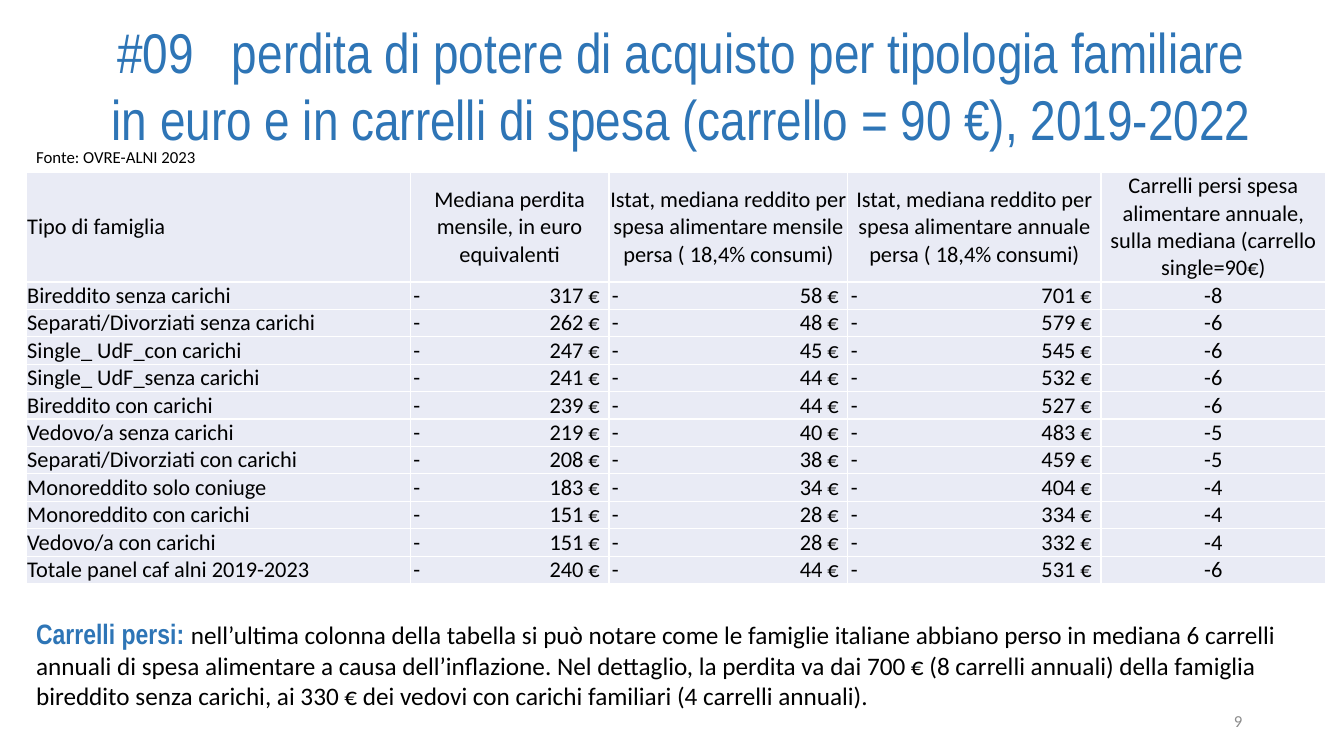
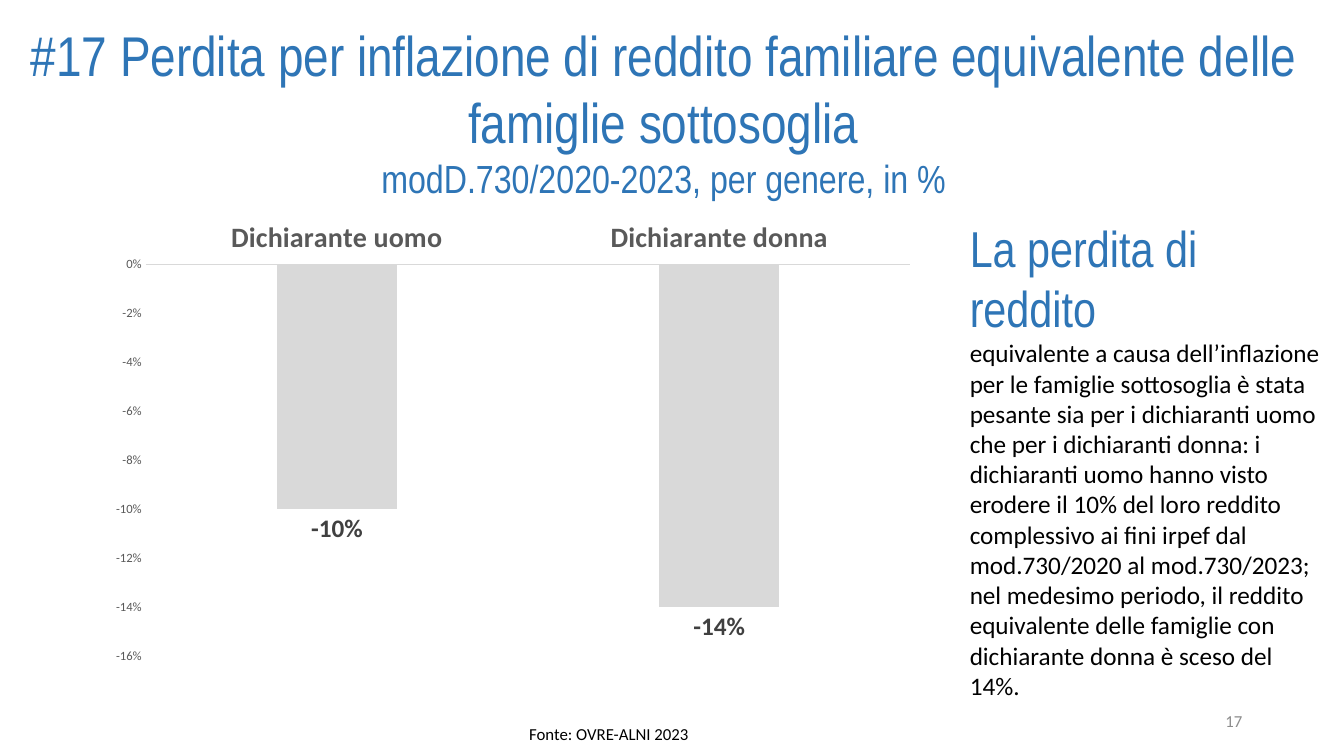
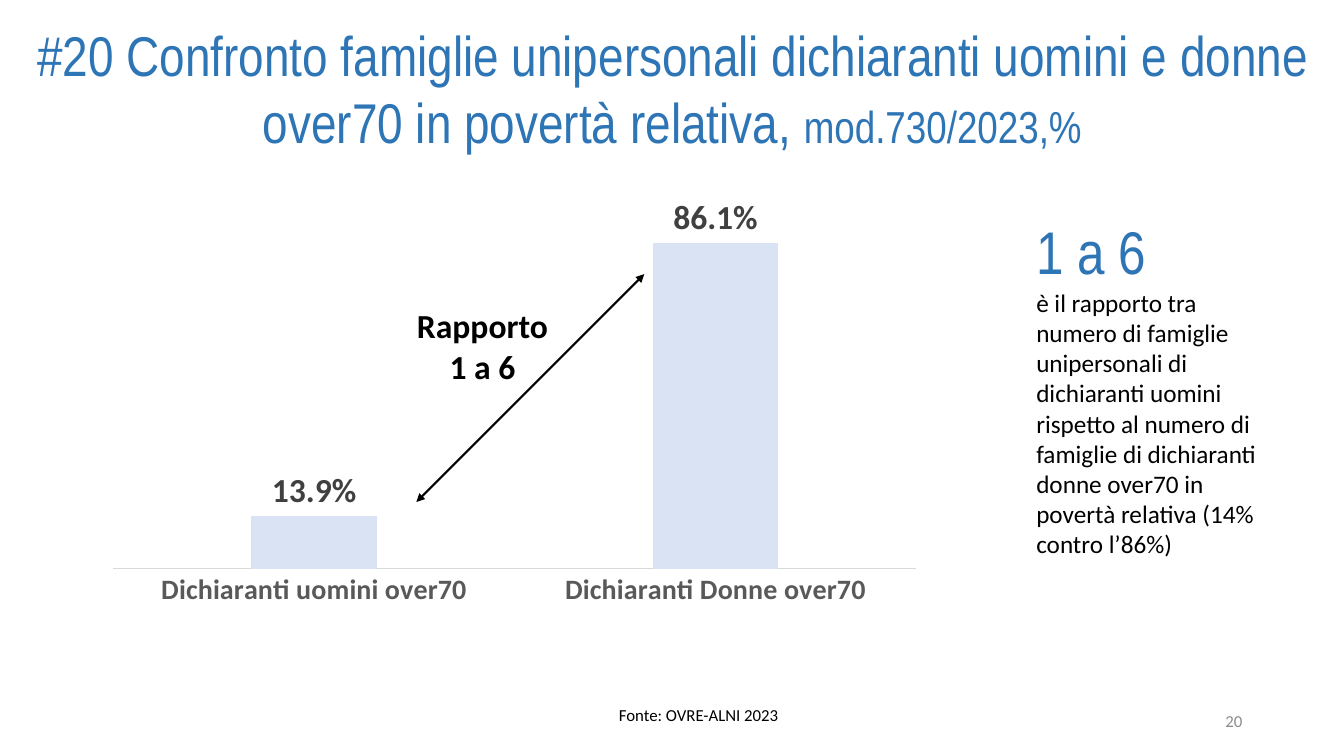
"""Build three slides on purchasing power and family income in Italy."""
from lxml import etree
from pptx import Presentation
from pptx.chart.data import CategoryChartData
from pptx.dml.color import RGBColor
from pptx.enum.chart import XL_CHART_TYPE as CT, XL_LABEL_POSITION as LP
from pptx.enum.chart import XL_TICK_LABEL_POSITION as TLP, XL_TICK_MARK as TM
from pptx.enum.shapes import MSO_CONNECTOR as CONN
from pptx.enum.text import MSO_ANCHOR as ANCHOR, MSO_AUTO_SIZE as FIT, PP_ALIGN as ALIGN
from pptx.oxml.ns import qn
from pptx.util import Inches, Pt

COLORS = {
    "accent": "2E75B6", "text": "000000", "page": "8C8C8C", "cell": "E9EBF5",
    "white": "FFFFFF", "axis": "D9D9D9", "axis_text": "595959",
    "label": "404040", "grey_bar": "D9D9D9", "blue_bar": "DAE3F3",
}
HEAD, BODY = "Arial Narrow", "Calibri"


def rgb(name):
    return RGBColor.from_string(COLORS[name])


def style(font, size, color="text", bold=False, name=BODY):
    font.size, font.bold, font.name = Pt(size), bold, name
    font.color.rgb = rgb(color)


def head(text, size, bold=False, spacing=0):
    return text, dict(size=size, color="accent", bold=bold, name=HEAD), spacing


def body(text, size=18, color="text", bold=False):
    return text, dict(size=size, color=color, bold=bold), 0


class Deck:
    def __init__(self):
        self.prs = Presentation()
        self.prs.slide_width, self.prs.slide_height = Inches(13.33), Inches(7.5)
        self.s = None

    def slide(self, number):
        self.s = self.prs.slides.add_slide(self.prs.slide_layouts[6])
        self.text((9.42, 6.95, 3, 0.4), [[body(number, 12, "page")]],
                  ALIGN.RIGHT, ANCHOR.MIDDLE)

    def fill(self, tf, paragraphs, align):
        for i, runs in enumerate(paragraphs):
            p = tf.paragraphs[0] if i == 0 else tf.add_paragraph()
            p.alignment = align
            for text, look, spacing in runs:
                r = p.add_run()
                r.text = text
                style(r.font, **look)
                if spacing:
                    r._r.get_or_add_rPr().set("spc", str(spacing * 100))

    def text(self, box, paragraphs, align=ALIGN.LEFT, anchor=ANCHOR.TOP, wrap=True):
        tf = self.s.shapes.add_textbox(*map(Inches, box)).text_frame
        tf.word_wrap, tf.auto_size, tf.vertical_anchor = wrap, FIT.NONE, anchor
        self.fill(tf, paragraphs, align)

    def title(self, box, paragraphs):
        self.text(box, paragraphs, ALIGN.CENTER)

    def source(self, left, top):
        self.text((left, top, 1.78, 0.3), [[body("Fonte: OVRE-ALNI 2023", 12)]], wrap=False)

    def cell(self, cell, text, align, anchor, tab=None):
        cell.fill.solid()
        cell.fill.fore_color.rgb = rgb("cell")
        cell.margin_left = cell.margin_right = Inches(0.01)
        cell.margin_top = cell.margin_bottom = 0
        cell.vertical_anchor = anchor
        self.fill(cell.text_frame, [[body(text, 16)]], align)
        if tab:
            pPr = cell.text_frame.paragraphs[0]._p.get_or_add_pPr()
            tabs = etree.SubElement(pPr, qn("a:tabLst"))
            etree.SubElement(tabs, qn("a:tab"), pos=str(tab), algn="r")
        tcPr = cell._tc.get_or_add_tcPr()
        for i, side in enumerate(("lnL", "lnR", "lnT", "lnB")):
            ln = etree.Element(qn(f"a:{side}"), w=str(Pt(1)))
            solid = etree.SubElement(ln, qn("a:solidFill"))
            etree.SubElement(solid, qn("a:srgbClr"), val=COLORS["white"])
            tcPr.insert(i, ln)

    def table(self, left, top, widths, heights, header, rows):
        tb = self.s.shapes.add_table(len(heights), len(widths), Inches(left), Inches(top),
                                     Inches(sum(widths)), Inches(sum(heights))).table
        tb.first_row = tb.horz_banding = False
        for col, width in zip(tb.columns, widths):
            col.width = Inches(width)
        for row, height in zip(tb.rows, heights):
            row.height = Inches(height)
        for c, text in enumerate(header):
            self.cell(tb.cell(0, c), text, ALIGN.CENTER if c else ALIGN.LEFT, ANCHOR.MIDDLE)
        for r, (family, *losses, carts) in enumerate(rows, 1):
            self.cell(tb.cell(r, 0), family, ALIGN.LEFT, ANCHOR.BOTTOM)
            for c, loss in enumerate(losses, 1):
                self.cell(tb.cell(r, c), f"-\t{loss} €", ALIGN.LEFT, ANCHOR.BOTTOM,
                          Inches(widths[c] - 0.12))
                tb.cell(r, c).margin_left = Inches(0.03)
            self.cell(tb.cell(r, len(widths) - 1), str(carts), ALIGN.CENTER, ANCHOR.BOTTOM)

    def column_chart(self, box, plot_box, data, color, fmt, label_size, scale):
        cd = CategoryChartData(number_format=fmt)
        cd.categories = list(data)
        cd.add_series("Series 1", list(data.values()))
        ch = self.s.shapes.add_chart(CT.COLUMN_CLUSTERED, *map(Inches, box), cd).chart
        ch.has_legend = ch.has_title = False
        style(ch.font, 10)
        plot = ch.plots[0]
        plot.gap_width, plot.overlap, plot.vary_by_categories = 219, -27, False
        bar = plot.series[0]
        bar.invert_if_negative = False
        bar.format.fill.solid()
        bar.format.fill.fore_color.rgb = rgb(color)
        labels = bar.data_labels
        labels.show_value, labels.position = True, LP.OUTSIDE_END
        labels.number_format, labels.number_format_is_linked = fmt, False
        style(labels.font, label_size, "label", True)
        cat, val = ch.category_axis, ch.value_axis
        cat.major_tick_mark = val.major_tick_mark = TM.NONE
        cat.format.line.color.rgb = rgb("axis")
        cat.format.line.width = Pt(0.75)
        style(cat.tick_labels.font, 20, "axis_text", True)
        val.minimum_scale, val.maximum_scale, val.major_unit = scale
        val.has_major_gridlines = False
        val.format.line.fill.background()
        style(val.tick_labels.font, 9, "axis_text")
        val.tick_labels.number_format = fmt
        val.tick_labels.number_format_is_linked = False
        area = ch._chartSpace.chart.plotArea
        for old in area.findall(qn("c:layout")):
            area.remove(old)
        layout = etree.Element(qn("c:layout"))
        manual = etree.SubElement(layout, qn("c:manualLayout"))
        parts = [("layoutTarget", "inner"), ("xMode", "edge"), ("yMode", "edge")]
        for tag, value in parts + list(zip("xywh", plot_box)):
            etree.SubElement(manual, qn(f"c:{tag}"), val=str(value))
        area.insert(0, layout)
        return ch

    def double_arrow(self, start, end):
        cx = self.s.shapes.add_connector(CONN.STRAIGHT, *map(Inches, start + end))
        cx.line.color.rgb, cx.line.width = rgb("text"), Pt(1.5)
        ln = cx.line._get_or_add_ln()
        for tag in ("a:headEnd", "a:tailEnd"):
            etree.SubElement(ln, qn(tag), type="triangle")
        etree.SubElement(cx._element.spPr, qn("a:effectLst"))


def main():
    deck = Deck()

    deck.slide("9")
    deck.title((0.55, 0.12, 12.41, 1.45), [
        [head("#09", 40), head(" ", 40, spacing=18),
         head("perdita di potere di acquisto per tipologia familiare", 40)],
        [head("in euro e in carrelli di spesa (carrello = 90 €), 2019-2022", 40)]])
    deck.text((0.26, 6.07, 12.7, 1.19), [[
        head("Carrelli persi: ", 20, True),
        body("nell’ultima colonna della tabella si può notare come le famiglie italiane "
             "abbiano perso in mediana 6 carrelli annuali di spesa alimentare a causa "
             "dell’inflazione. Nel dettaglio, la perdita va dai 700 € (8 carrelli annuali) "
             "della famiglia bireddito senza carichi, ai 330 € dei vedovi con carichi "
             "familiari (4 carrelli annuali).")]])
    deck.source(0.26, 1.41)
    rows = [
        ("Bireddito senza carichi", 317, 58, 701, -8),
        ("Separati/Divorziati senza carichi", 262, 48, 579, -6),
        ("Single_ UdF_con carichi", 247, 45, 545, -6),
        ("Single_ UdF_senza carichi", 241, 44, 532, -6),
        ("Bireddito con carichi", 239, 44, 527, -6),
        ("Vedovo/a senza carichi", 219, 40, 483, -5),
        ("Separati/Divorziati con carichi", 208, 38, 459, -5),
        ("Monoreddito solo coniuge", 183, 34, 404, -4),
        ("Monoreddito con carichi", 151, 28, 334, -4),
        ("Vedovo/a con carichi", 151, 28, 332, -4),
        ("Totale panel caf alni 2019-2023", 240, 44, 531, -6),
    ]
    income = "Istat, mediana reddito per spesa alimentare {} persa ( 18,4% consumi)"
    header = ["Tipo di famiglia", "Mediana perdita mensile, in euro equivalenti",
              income.format("mensile"), income.format("annuale"),
              "Carrelli persi spesa alimentare annuale, sulla mediana (carrello single=90€)"]
    deck.table(0.26, 1.71, [3.81, 1.97, 2.37, 2.51, 2.23],
               [0.91] + [0.2] * len(rows), header, rows)

    deck.slide("17")
    deck.title((0, 0.15, 13.16, 1.92), [
        [head("#17 Perdita per inflazione di reddito familiare equivalente delle "
              "famiglie sottosoglia", 40)],
        [head("modD.730/2020-2023, per genere, in %", 28)]])
    deck.source(5.15, 7.13)
    deck.text((9.52, 2.1, 3.74, 4.34), [
        [head("La perdita di reddito", 36)],
        [body("equivalente a causa dell’inflazione per le famiglie sottosoglia è stata "
              "pesante sia per i dichiaranti uomo che per i dichiaranti donna: i dichiaranti "
              "uomo hanno visto erodere il 10% del loro reddito complessivo ai fini irpef dal "
              "mod.730/2020 al mod.730/2023; nel medesimo periodo, il reddito equivalente "
              "delle famiglie con dichiarante donna è sceso del 14%.")]])
    losses = deck.column_chart(
        (0.67, 1.78, 8.62, 4.98), (0.09, 0.17, 0.88, 0.78),
        {"Dichiarante uomo": -0.1, "Dichiarante donna": -0.14},
        "grey_bar", "0%", 18, (-0.16, 0, 0.02))
    losses.category_axis.tick_label_position = TLP.HIGH

    deck.slide("20")
    deck.title((0.18, 0.15, 12.98, 1.45), [[
        head("#20 Confronto famiglie unipersonali dichiaranti uomini e donne over70 in "
             "povertà relativa, ", 40),
        head("mod.730/2023,%", 32)]])
    deck.source(6.04, 6.94)
    deck.text((10.18, 2.08, 2.63, 3.55), [
        [head("1 a 6", 43)],
        [body("è il rapporto tra numero di famiglie unipersonali di dichiaranti uomini "
              "rispetto al numero di famiglie di dichiaranti donne over70 in povertà "
              "relativa (14% contro l’86%)")]])
    deck.double_arrow((4.13, 4.98), (6.39, 2.72))
    poverty = deck.column_chart(
        (1.12, 1.89, 8.3, 4.52), (0, 0, 0.96, 0.83),
        {"Dichiaranti uomini over70": 0.139, "Dichiaranti Donne over70": 0.861},
        "blue_bar", "0.0%", 24, (0, 1, 0.2))
    poverty.value_axis.visible = False
    deck.text((3.94, 2.98, 1.69, 0.91),
              [[body("Rapporto", 24, bold=True)], [body("1 a 6", 24, bold=True)]],
              ALIGN.CENTER)

    deck.prs.save("out.pptx")


if __name__ == "__main__":
    main()
